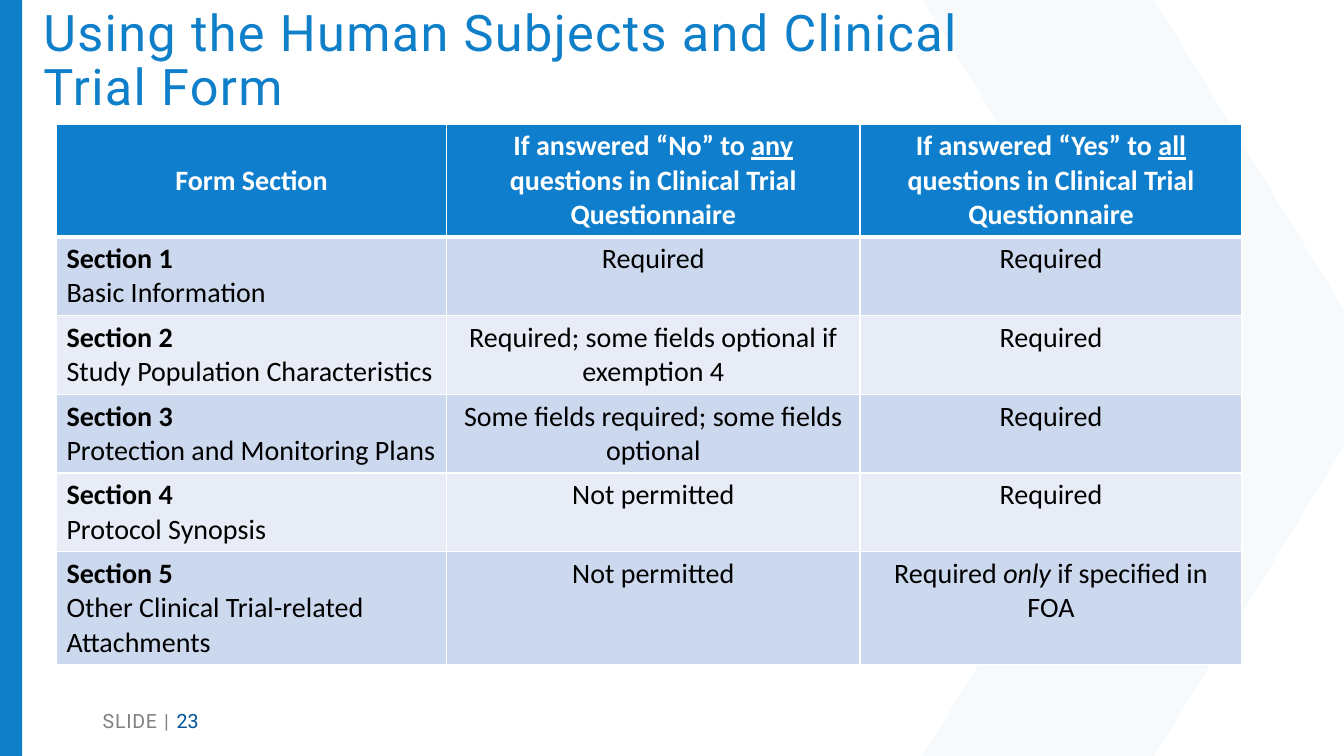
from dataclasses import dataclass

from lxml import etree
from pptx import Presentation
from pptx.dml.color import RGBColor
from pptx.enum import shapes, text
from pptx.oxml import ns
from pptx.util import Inches, Pt


@dataclass(frozen=True)
class Theme:
    blue: str = "0F7FC9"
    header: str = "0F7FCD"
    bands: tuple[str, str] = ("CCD8ED", "E7ECF6")
    white: str = "FFFFFF"
    black: str = "000000"
    gray: str = "808080"
    navy: str = "015396"
    heading_font: str = "Roboto"
    body_font: str = "Calibri"
    title_size: int = 36
    table_size: int = 20
    footer_size: int = 14


@dataclass(frozen=True)
class Span:
    text: str
    bold: bool = False
    italic: bool = False
    underline: bool = False


@dataclass(frozen=True)
class Section:
    name: str
    if_no: str
    if_yes: tuple[Span, ...] = (Span("Required"),)


THEME = Theme()
COLUMNS = (3.87, 4.1, 3.79)
ROWS = (1.05, 0.73, 0.73, 0.73, 0.73, 1.05)
CHEVRON = ((9.15, 0), (11.45, 0), (13.33, 3.07), (13.33, 4.43),
           (11.45, 7.5), (9.15, 7.5), (11.45, 3.75))
SECTIONS = (
    Section("Basic Information", "Required"),
    Section("Study Population Characteristics",
            "Required; some fields optional if exemption 4"),
    Section("Protection and Monitoring Plans",
            "Some fields required; some fields optional"),
    Section("Protocol Synopsis", "Not permitted"),
    Section("Other Clinical Trial-related Attachments", "Not permitted",
            (Span("Required "), Span("only", italic=True),
             Span(" if specified in FOA"))),
)


def add_text(p, content: str, *, size: int, font: str, color: str,
             bold: bool = False, italic: bool = False,
             underline: bool = False, spacing: float = 0) -> None:
    r = p.add_run()
    r.text = content
    f = r.font
    f.size, f.name = Pt(size), font
    f.bold, f.italic, f.underline = bold, italic, underline
    f.color.rgb = RGBColor.from_string(color)
    r._r.get_or_add_rPr().set("spc", str(int(spacing * 100)))


def fill_shape(sp, color: str) -> None:
    sp.shadow.inherit = False
    sp.fill.solid()
    sp.fill.fore_color.rgb = RGBColor.from_string(color)
    sp.line.fill.background()


def draw_background(s) -> None:
    points = [(Inches(x), Inches(y)) for x, y in CHEVRON]
    fb = s.shapes.build_freeform(*points[0])
    fb.add_line_segments(points[1:], close=True)
    chevron = fb.convert_to_shape()
    fill_shape(chevron, THEME.blue)
    clr = chevron._element.spPr.find(".//" + ns.qn("a:srgbClr"))
    etree.SubElement(clr, ns.qn("a:alpha"), val="3000")
    bar = s.shapes.add_shape(shapes.MSO_SHAPE.RECTANGLE, 0, 0,
                             Inches(0.22), Inches(7.5))
    fill_shape(bar, THEME.blue)


def format_title(s) -> None:
    title = s.shapes.title
    title.left, title.top = Inches(0.33), Inches(0)
    title.width, title.height = Inches(12.22), Inches(1.23)
    s.shapes._spTree.append(title._element)
    tf = title.text_frame
    tf.word_wrap = True
    tf.auto_size = text.MSO_AUTO_SIZE.NONE
    tf.vertical_anchor = text.MSO_ANCHOR.MIDDLE
    p = tf.paragraphs[0]
    p.alignment = text.PP_ALIGN.LEFT
    p.line_spacing = 0.9
    style = dict(size=THEME.title_size, font=THEME.heading_font,
                 color=THEME.blue, spacing=1)
    add_text(p, "Using the Human Subjects and Clinical ", **style)
    p.add_line_break()
    add_text(p, "Trial Form", **style)


def set_borders(cell, bottom: float, top: float) -> None:
    tc_pr = cell._tc.get_or_add_tcPr()
    for side, width in (("L", 1), ("R", 1), ("T", top), ("B", bottom)):
        ln = etree.SubElement(tc_pr, ns.qn("a:ln" + side), w=str(Pt(width)))
        solid = etree.SubElement(ln, ns.qn("a:solidFill"))
        etree.SubElement(solid, ns.qn("a:srgbClr"), val=THEME.white)


def fill_cell(cell, paragraphs: tuple[tuple[Span, ...], ...], *, fill: str,
              color: str, centered: bool, header: bool, top: float) -> None:
    set_borders(cell, bottom=3 if header else 1, top=top)
    cell.fill.solid()
    cell.fill.fore_color.rgb = RGBColor.from_string(fill)
    cell.vertical_anchor = (text.MSO_ANCHOR.MIDDLE if header
                            else text.MSO_ANCHOR.TOP)
    tf = cell.text_frame
    for i, spans in enumerate(paragraphs):
        p = tf.add_paragraph() if i else tf.paragraphs[0]
        p.alignment = (text.PP_ALIGN.CENTER if centered
                       else text.PP_ALIGN.LEFT)
        for span in spans:
            add_text(p, span.text, size=THEME.table_size,
                     font=THEME.body_font, color=color,
                     bold=header or span.bold, italic=span.italic,
                     underline=span.underline)


def answer_header(answer: str, quantity: str) -> tuple[Span, ...]:
    return (Span(f"If answered “{answer}” to "),
            Span(quantity, underline=True),
            Span(" questions in Clinical Trial Questionnaire"))


def draw_table(s) -> None:
    table = s.shapes.add_table(len(ROWS), len(COLUMNS), Inches(0.56),
                               Inches(1.23), Inches(sum(COLUMNS)),
                               Inches(sum(ROWS))).table
    for column, width in zip(table.columns, COLUMNS):
        column.width = Inches(width)
    for row, height in zip(table.rows, ROWS):
        row.height = Inches(height)
    headers = ((Span("Form Section"),), answer_header("No", "any"),
               answer_header("Yes", "all"))
    for c, spans in enumerate(headers):
        fill_cell(table.cell(0, c), (spans,), fill=THEME.header,
                  color=THEME.white, centered=True, header=True, top=1)
    for n, section in enumerate(SECTIONS, 1):
        label = ((Span(f"Section {n}", bold=True),), (Span(section.name),))
        cells = (label, ((Span(section.if_no),),), (section.if_yes,))
        for c, paragraphs in enumerate(cells):
            fill_cell(table.cell(n, c), paragraphs,
                      fill=THEME.bands[(n - 1) % 2], color=THEME.black,
                      centered=c > 0, header=False, top=3 if n == 1 else 1)


def draw_footer(s) -> None:
    tf = s.shapes.add_textbox(Inches(0.92), Inches(6.95),
                              Inches(3), Inches(0.4)).text_frame
    tf.word_wrap = True
    tf.vertical_anchor = text.MSO_ANCHOR.MIDDLE
    p = tf.paragraphs[0]
    for content, color, spacing in (("SLIDE", THEME.gray, 0.5),
                                    (" | ", THEME.gray, 1),
                                    ("23", THEME.navy, 0)):
        add_text(p, content, size=THEME.footer_size, font=THEME.heading_font,
                 color=color, spacing=spacing)


def main() -> None:
    prs = Presentation()
    prs.slide_width, prs.slide_height = Inches(13.33), Inches(7.5)
    s = prs.slides.add_slide(prs.slide_layouts[5])
    draw_background(s)
    format_title(s)
    draw_table(s)
    draw_footer(s)
    prs.save("out.pptx")


if __name__ == "__main__":
    main()
